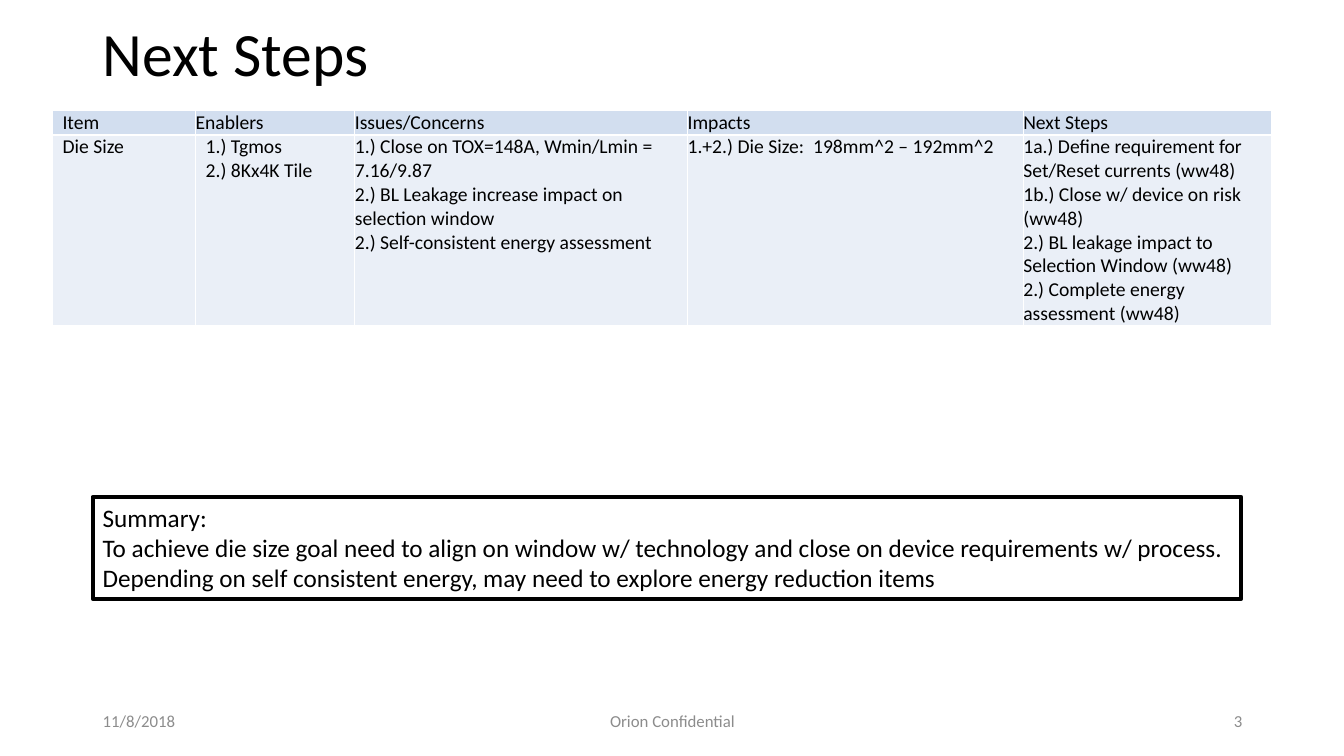
import pptx
import pptx.dml.color
import pptx.enum.shapes
import pptx.enum.text
import pptx.oxml
import pptx.oxml.ns
import pptx.util

PX = 9144
ALIGN = pptx.enum.text.PP_ALIGN
ANCHOR = pptx.enum.text.MSO_ANCHOR

COLUMN_WIDTHS = [142, 158, 330, 333, 246]
ROW_HEIGHTS = [24, 189]
ROW_FILLS = ["D2DEEF", "EAEFF7"]
INDENTED_CELLS = {(0, 0), (1, 0), (1, 1)}
ROWS = [
    ["Item", "Enablers", "Issues/Concerns", "Impacts", "Next Steps"],
    [
        "Die Size",
        "1.) Tgmos\n2.) 8Kx4K Tile",
        "1.) Close on TOX=148A, Wmin/Lmin = 7.16/9.87\n"
        "2.) BL Leakage increase impact on selection window\n"
        "2.) Self-consistent energy assessment",
        "1.+2.) Die Size:  198mm^2 – 192mm^2",
        "1a.) Define requirement for Set/Reset currents (ww48)\n"
        "1b.) Close w/ device on risk (ww48)\n"
        "2.) BL leakage impact to Selection Window (ww48)\n"
        "2.) Complete energy assessment (ww48)",
    ],
]
SUMMARY = (
    "Summary:\n"
    "To achieve die size goal need to align on window w/ technology and close on "
    "device requirements w/ process.\n"
    "Depending on self consistent energy, may need to explore energy reduction items"
)


def px(*lengths):
    """Turn whole pixels into EMU."""
    return [pptx.util.Emu(length * PX) for length in lengths]


def color(value):
    """Turn a hex string into a colour."""
    return pptx.dml.color.RGBColor.from_string(value)


def write(text_frame, text, size, ink="000000", align=ALIGN.LEFT, spacing=1.0):
    """Set the text of a frame and format its runs."""
    text_frame.text = text
    text_frame.word_wrap = True
    for paragraph in text_frame.paragraphs:
        paragraph.alignment = align
        paragraph.line_spacing = spacing
        for run in paragraph.runs:
            run.font.name = "Calibri"
            run.font.size = pptx.util.Pt(size)
            run.font.color.rgb = color(ink)


def add_text(slide, box, text, size, **style):
    """Add a vertically centred text box."""
    text_frame = slide.shapes.add_textbox(*px(*box)).text_frame
    write(text_frame, text, size, **style)
    text_frame.vertical_anchor = ANCHOR.MIDDLE


def add_borders(cell):
    """Give a cell thin white borders."""
    properties = cell._tc.get_or_add_tcPr()
    for side in ("lnL", "lnR", "lnT", "lnB"):
        properties.append(pptx.oxml.parse_xml(
            f'<a:{side} {pptx.oxml.ns.nsdecls("a")} w="12700"><a:solidFill>'
            f'<a:srgbClr val="FFFFFF"/></a:solidFill></a:{side}>'
        ))


def add_steps_table(slide, box):
    """Add the table of items, concerns and next steps."""
    table = slide.shapes.add_table(len(ROWS), len(COLUMN_WIDTHS), *px(*box)).table
    table.first_row = table.horz_banding = False
    for column, width in zip(table.columns, px(*COLUMN_WIDTHS)):
        column.width = width
    for row, height in zip(table.rows, px(*ROW_HEIGHTS)):
        row.height = height
    for row_index, texts in enumerate(ROWS):
        for column_index, text in enumerate(texts):
            cell = table.cell(row_index, column_index)
            indented = (row_index, column_index) in INDENTED_CELLS
            cell.margin_left = px(10 if indented else 0)[0]
            cell.margin_right = cell.margin_top = cell.margin_bottom = 0
            add_borders(cell)
            cell.fill.solid()
            cell.fill.fore_color.rgb = color(ROW_FILLS[row_index])
            write(cell.text_frame, text, 14)


def add_summary(slide, box):
    """Add the outlined summary box."""
    shape = slide.shapes.add_shape(
        pptx.enum.shapes.MSO_SHAPE.RECTANGLE, *px(*box))
    shape.shadow.inherit = False
    shape.fill.background()
    shape.line.color.rgb = color("000000")
    shape.line.width = pptx.util.Pt(3)
    write(shape.text_frame, SUMMARY, 18)
    shape.text_frame.vertical_anchor = ANCHOR.TOP


def add_footer(slide, box):
    """Add the date, the notice and the slide number."""
    left, top, width, height = box
    parts = [
        (0, 300, "11/8/2018", ALIGN.LEFT),
        (350, 450, "Orion Confidential", ALIGN.CENTER),
        (width - 300, 300, "3", ALIGN.RIGHT),
    ]
    for offset, part_width, text, align in parts:
        add_text(slide, (left + offset, top, part_width, height), text, 12,
                 ink="8C8C8C", align=align)


def main():
    """Build and save the slide."""
    presentation = pptx.Presentation()
    presentation.slide_width, presentation.slide_height = px(1333, 750)
    slide = presentation.slides.add_slide(presentation.slide_layouts[6])
    add_text(slide, (92, 3, 1150, 107), "Next Steps", 44, spacing=0.9)
    add_footer(slide, (92, 695, 1150, 40))
    add_steps_table(slide, (52, 110, sum(COLUMN_WIDTHS), sum(ROW_HEIGHTS)))
    add_summary(slide, (92, 493, 1139, 101))
    presentation.save("out.pptx")


if __name__ == "__main__":
    main()
